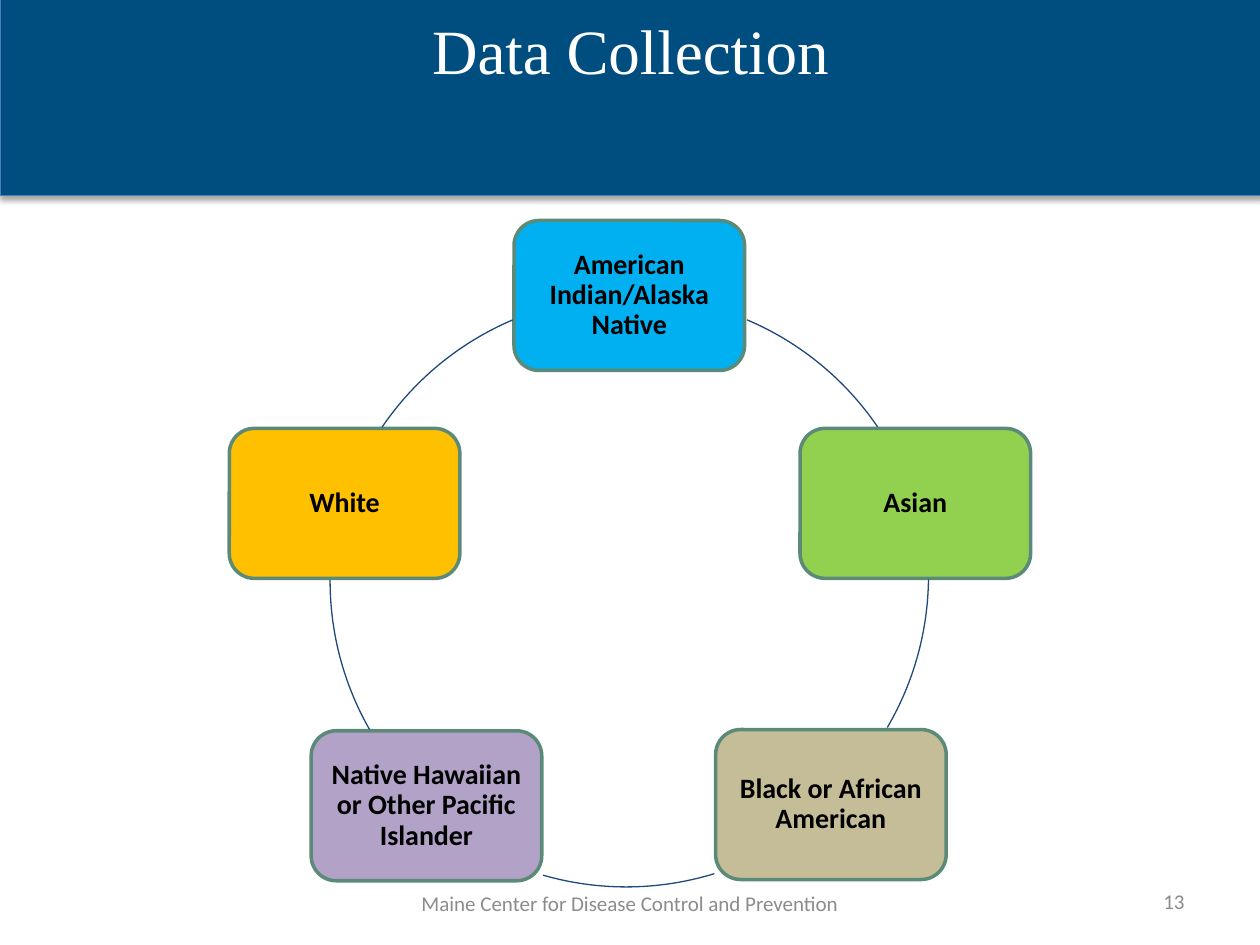
from pptx import Presentation
from pptx.dml.color import RGBColor
from pptx.enum.shapes import MSO_SHAPE as Preset
from pptx.enum.text import MSO_ANCHOR as Anchor, MSO_AUTO_SIZE as AutoSize, PP_ALIGN as Align
from pptx.oxml import parse_xml
from pptx.util import Inches, Pt

NAVY = RGBColor(0x00, 0x4D, 0x80)
BAND_EDGE = RGBColor(0x4B, 0x7E, 0xBC)
BOX_EDGE = RGBColor(0x5C, 0x8A, 0x78)
ARC_BLUE = RGBColor(0x1F, 0x49, 0x7D)
SKY = RGBColor(0x00, 0xB0, 0xF0)
GREEN = RGBColor(0x92, 0xD0, 0x50)
TAN = RGBColor(0xC4, 0xBD, 0x97)
LILAC = RGBColor(0xB3, 0xA2, 0xC7)
AMBER = RGBColor(0xFF, 0xC0, 0x00)
GREY = RGBColor(0x8C, 0x8C, 0x8C)
WHITE = RGBColor(0xFF, 0xFF, 0xFF)
BLACK = RGBColor(0x00, 0x00, 0x00)

BOX_WIDTH, BOX_HEIGHT, CIRCLE = 1.83, 1.19, 4.76

# Label, fill, left, top
GROUPS = [
    ("American Indian/Alaska Native", SKY, 4.08, 1.75),
    ("Asian", GREEN, 6.35, 3.4),
    ("Black or African American", TAN, 5.68, 5.79),
    ("Native Hawaiian or Other Pacific Islander", LILAC, 2.47, 5.8),
    ("White", AMBER, 1.82, 3.4),
]

# Circle left, circle top, start and end in degrees clockwise from the right
ARCS = [
    (2.62, 2.35, 293, 325.8),
    (2.61, 2.19, 0.7, 30.4),
    (2.59, 2.28, 72.9, 106.1),
    (2.62, 2.23, 150.3, 180.2),
    (2.62, 2.35, 214.2, 247),
]

SHADOW = (
    '<a:effectLst xmlns:a="http://schemas.openxmlformats.org/drawingml/2006/main">'
    '<a:outerShdw blurRad="39370" dist="22860" dir="5400000" rotWithShape="0">'
    '<a:srgbClr val="000000"><a:alpha val="35000"/></a:srgbClr>'
    "</a:outerShdw></a:effectLst>"
)


class SlideBuilder:
    """Holds the text style and the current slide."""

    font = "Calibri"

    def __init__(self, slide):
        self.slide = slide

    def place(self, shape, left, top, width, height):
        bounds = dict(left=left, top=top, width=width, height=height)
        for name, value in bounds.items():
            setattr(shape, name, Inches(value))

    def outline(self, shape, color, width):
        shape.line.color.rgb = color
        shape.line.width = Pt(width)

    def set_text(self, shape, text, align=Align.CENTER, anchor=Anchor.MIDDLE,
                 inset=None, spacing=None, **font_format):
        frame = shape.text_frame
        frame.text = text
        frame.word_wrap = True
        frame.auto_size = AutoSize.NONE
        frame.vertical_anchor = anchor
        for side, value in (inset or {}).items():
            setattr(frame, f"margin_{side}", Inches(value))
        paragraph = frame.paragraphs[0]
        paragraph.alignment = align
        paragraph.line_spacing = spacing
        font = paragraph.runs[0].font
        font.color.rgb = font_format.pop("color")
        for name, value in {"name": self.font, **font_format}.items():
            setattr(font, name, value)

    def title_band(self, text):
        band = self.slide.shapes.title
        self.place(band, 0, -0.03, 10.01, 1.58)
        band.fill.solid()
        band.fill.fore_color.rgb = NAVY
        self.outline(band, BAND_EDGE, 0.75)
        band.element.spPr.append(parse_xml(SHADOW))
        self.set_text(band, text, anchor=Anchor.TOP, inset={"top": 0.12},
                      name="Times New Roman", size=Pt(36), color=WHITE)

    def box(self, text, fill, left, top):
        shape = self.slide.shapes.add_shape(
            Preset.ROUNDED_RECTANGLE, Inches(left), Inches(top),
            Inches(BOX_WIDTH), Inches(BOX_HEIGHT))
        shape.shadow.inherit = False
        shape.fill.solid()
        shape.fill.fore_color.rgb = fill
        self.outline(shape, BOX_EDGE, 2)
        inset = dict.fromkeys(("left", "right", "top", "bottom"), 0.07)
        self.set_text(shape, text, inset=inset, spacing=0.9,
                      size=Pt(16), bold=True, color=BLACK)

    def arc(self, left, top, start, end):
        shape = self.slide.shapes.add_shape(
            Preset.ARC, Inches(left), Inches(top), Inches(CIRCLE), Inches(CIRCLE))
        shape.shadow.inherit = False
        shape.fill.background()
        self.outline(shape, ARC_BLUE, 0.75)
        # One degree is 60000 units; adjustments count in 100000 units
        for index, degrees in enumerate((start, end)):
            shape.adjustments[index] = degrees * 0.6

    def footer(self, text, left, top, width, align):
        shape = self.slide.shapes.add_textbox(
            Inches(left), Inches(top), Inches(width), Inches(0.4))
        self.set_text(shape, text, align=align, size=Pt(12), color=GREY)


def main():
    presentation = Presentation()
    presentation.slide_width = Inches(10)
    presentation.slide_height = Inches(7.5)
    title_only = presentation.slide_layouts[5]
    builder = SlideBuilder(presentation.slides.add_slide(title_only))

    # Title and footer
    builder.title_band("Data Collection")
    builder.footer("13", 7.17, 6.95, 2.33, Align.RIGHT)
    builder.footer("Maine Center for Disease Control and Prevention",
                   3, 6.97, 4, Align.CENTER)

    # Cycle of groups, each followed by the arc to the next
    for group, arc in zip(GROUPS, ARCS):
        builder.box(*group)
        builder.arc(*arc)

    presentation.save("out.pptx")


if __name__ == "__main__":
    main()
